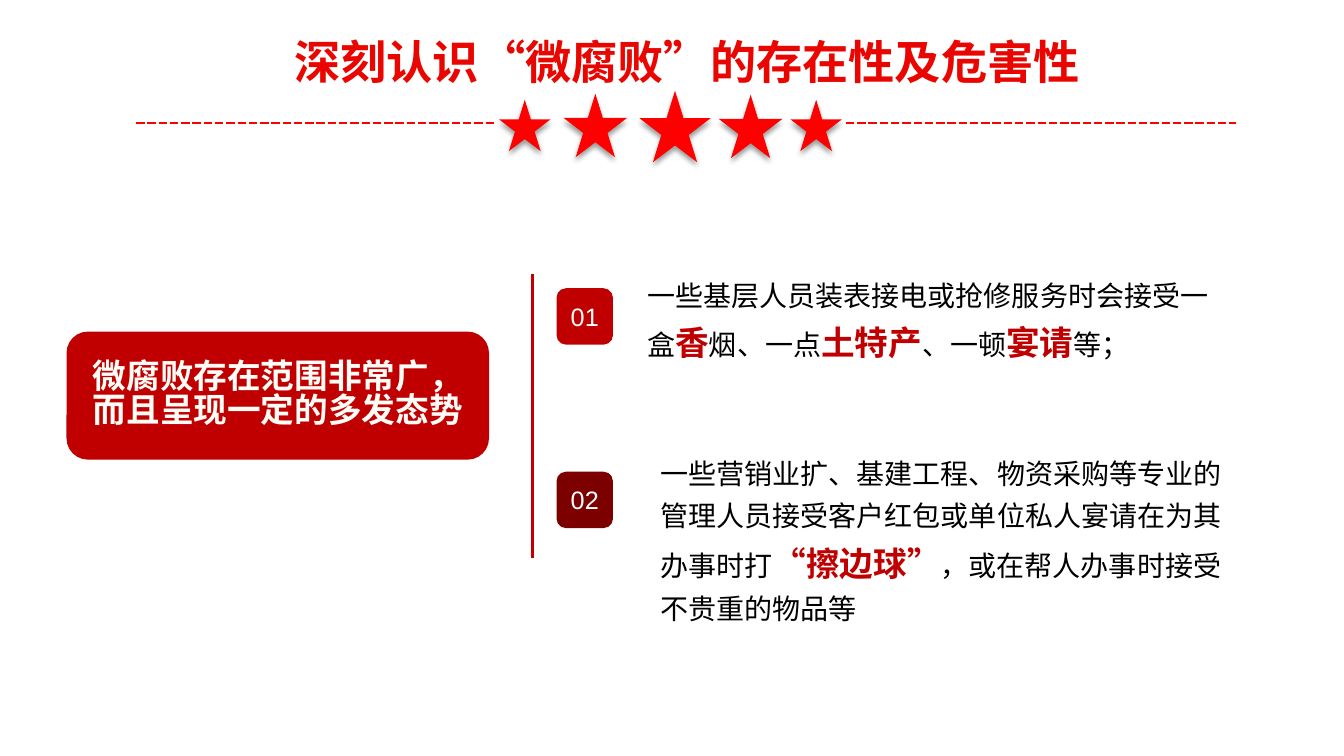
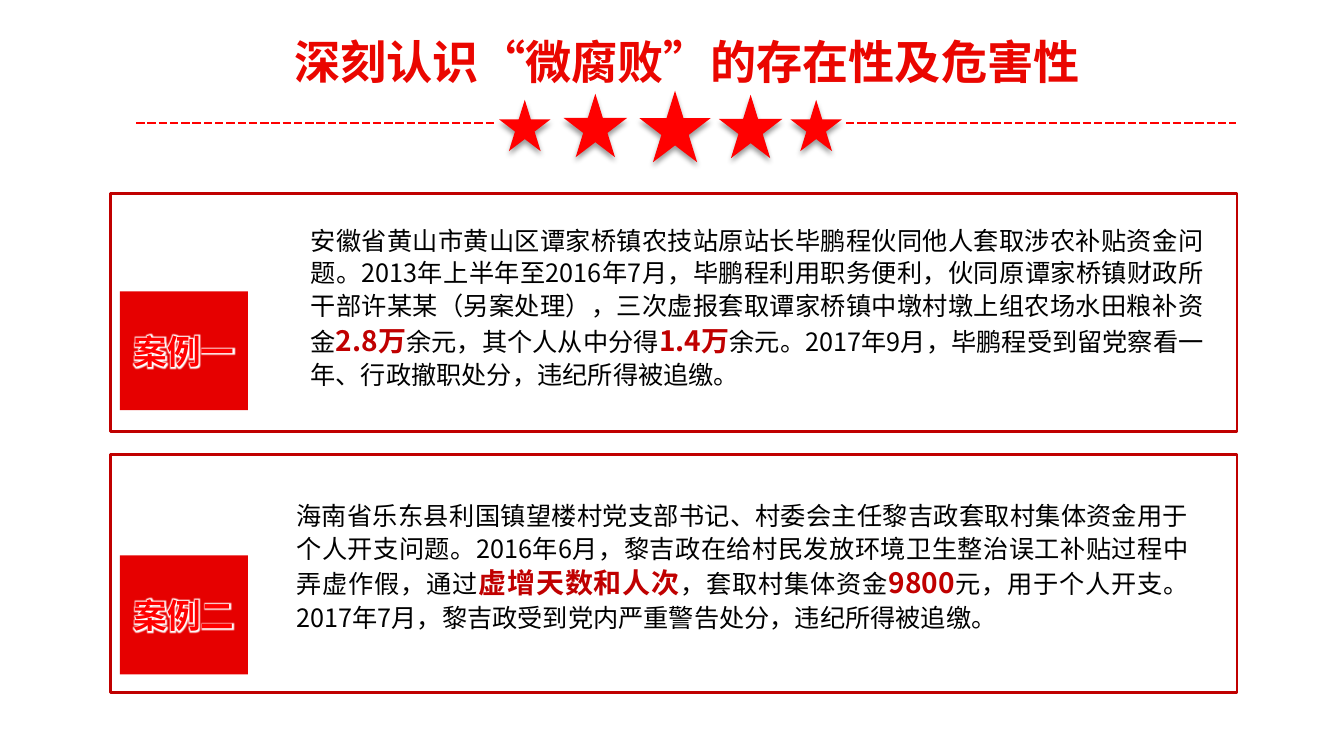
from lxml.etree import SubElement
from pptx import Presentation
from pptx.dml.color import RGBColor
from pptx.enum.dml import MSO_LINE
from pptx.enum.lang import MSO_LANGUAGE_ID
from pptx.enum.shapes import MSO_CONNECTOR, MSO_SHAPE
from pptx.enum.text import MSO_ANCHOR, MSO_AUTO_SIZE, PP_ALIGN
from pptx.oxml import parse_xml
from pptx.oxml.ns import nsdecls, qn
from pptx.util import Inches, Pt

COLORS = {
    "star": "FF0000",
    "crimson": "C00000",
    "maroon": "7D0000",
    "label": "E60000",
    "cream": "FFFDF8",
    "white": "FFFFFF",
    "black": "000000",
    "title_start": "EA0600",
    "title_end": "8E1E00",
    "label_end": "790000",
}
FONT = "Noto Sans CJK SC"
TITLE = "深刻认识“微腐败”的存在性及危害性"
TITLE_GRADIENT = [(0.28, "title_start"), (0.86, "title_end")]
LABEL_GRADIENT = [(0.49, "star"), (0.94, "label_end")]
STARS = [(4.95, 0.99, 0.51), (5.59, 0.93, 0.63), (6.34, 0.9, 0.71), (7.13, 0.94, 0.63), (7.84, 0.99, 0.51)]
STAR_SHADOW = (
    f'<a:outerShdw {nsdecls("a")} blurRad="50800" dist="38100" dir="5400000" rotWithShape="0">'
    f'<a:srgbClr val="{COLORS["black"]}"><a:alpha val="40000"/></a:srgbClr></a:outerShdw>'
)
TEXT_GLOW = (
    f'<a:effectLst {nsdecls("a")}><a:glow rad="63500">'
    f'<a:srgbClr val="{COLORS["white"]}"/></a:glow></a:effectLst>'
)


def rgb(name):
    return RGBColor.from_string(COLORS[name])


def apply(target, values):
    for name, value in values.items():
        setattr(target, name, value)


class SlideWriter:
    def __init__(self, deck):
        self.deck = deck
        self.page = None

    def new_page(self):
        self.page = self.deck.slides.add_slide(self.deck.slide_layouts[3])
        self.title(TITLE)
        for start, end in ((1.35, 4.92), (8.39, 12.26)):
            self.line((start, 1.22), (end, 1.22), "star", 2, MSO_LINE.SQUARE_DOT)
        for left, top, size in STARS:
            star = self.shape(MSO_SHAPE.STAR_5_POINT, (left, top, size, size), "star")
            effects = star.element.spPr.find(qn("a:effectLst"))
            effects.append(parse_xml(STAR_SHADOW))

    def place(self, box, area):
        apply(box, dict(zip(("left", "top", "width", "height"), map(Inches, area))))

    def span(self, para, text, size, color=None, bold=False, font=FONT, gradient=None):
        span = para.add_run()
        span.text = text
        apply(span.font, {"name": font, "size": Pt(size), "bold": bold,
                          "language_id": MSO_LANGUAGE_ID.SIMPLIFIED_CHINESE})
        if gradient:
            fill = span.font.fill
            fill.gradient()
            fill.gradient_angle = 270
            for stop, (position, name) in zip(fill.gradient_stops, gradient):
                stop.position = position
                stop.color.rgb = rgb(name)
        else:
            span.font.color.rgb = rgb(color)
        SubElement(span.font._element, qn("a:ea"), typeface=font)
        return span

    def title(self, text):
        box = self.page.shapes.title
        self.place(box, (2.68, 0.28, 8.27, 0.66))
        apply(box.text_frame, {"margin_top": 0, "margin_bottom": 0, "word_wrap": True,
                               "auto_size": MSO_AUTO_SIZE.NONE,
                               "vertical_anchor": MSO_ANCHOR.MIDDLE})
        para = box.text_frame.paragraphs[0]
        para.alignment = PP_ALIGN.CENTER
        self.span(para, text, 33, bold=True, gradient=TITLE_GRADIENT)

    def body(self, index, area, pieces, sizes, spacing, alignment):
        box = self.page.placeholders[index]
        self.place(box, area)
        apply(box.text_frame, {"word_wrap": True, "margin_top": Inches(0.07),
                               "auto_size": MSO_AUTO_SIZE.SHAPE_TO_FIT_TEXT,
                               "vertical_anchor": MSO_ANCHOR.TOP})
        para = box.text_frame.paragraphs[0]
        properties = para._p.get_or_add_pPr()
        apply_indent = {"marL": "0", "indent": "0"}
        for name, value in apply_indent.items():
            properties.set(name, value)
        SubElement(properties, qn("a:buNone"))
        apply(para, {"alignment": alignment, "line_spacing": spacing, "space_before": Pt(0)})
        for number, piece in enumerate(pieces):
            strong = number % 2 == 1
            self.span(para, piece, sizes[strong], "crimson" if strong else "black", strong)

    def shape(self, kind, area, fill=None, outline=None):
        box = self.page.shapes.add_shape(kind, *map(Inches, area))
        box.shadow.inherit = False
        if fill:
            box.fill.solid()
            box.fill.fore_color.rgb = rgb(fill)
        else:
            box.fill.background()
        if outline:
            box.line.color.rgb = rgb(outline)
            box.line.width = Pt(2)
        else:
            box.line.fill.background()
        return box

    def label(self, kind, area, fill, text, spacing=1.0, **style):
        box = self.shape(kind, area, fill)
        apply(box.text_frame, {"word_wrap": True, "vertical_anchor": MSO_ANCHOR.MIDDLE})
        para = box.text_frame.paragraphs[0]
        apply(para, {"alignment": PP_ALIGN.CENTER, "line_spacing": spacing})
        return self.span(para, text, **style)

    def line(self, start, end, color, width, dash=None):
        connector = self.page.shapes.add_connector(MSO_CONNECTOR.STRAIGHT, *map(Inches, start + end))
        connector.line.color.rgb = rgb(color)
        apply(connector.line, {"width": Pt(width), "dash_style": dash})
        SubElement(connector.element.spPr, qn("a:effectLst"))

    def case(self, index, frame_top, label_top, text_area, label, pieces):
        self.shape(MSO_SHAPE.RECTANGLE, (1.1, frame_top, 11.17, 2.36), outline="crimson")
        span = self.label(MSO_SHAPE.RECTANGLE, (1.19, label_top, 1.27, 1.18), "label", label,
                          size=24, bold=True, gradient=LABEL_GRADIENT)
        span.font._element.find(qn("a:latin")).addprevious(parse_xml(TEXT_GLOW))
        self.body(index, text_area, pieces, (18, 20), 1.08, PP_ALIGN.JUSTIFY)


def build_scope(writer):
    writer.new_page()
    points = [
        ("01", "crimson", 2.86, (6.32, 2.61, 5.78, 1.14),
         ["一些基层人员装表接电或抢修服务时会接受一盒", "香", "烟、一点", "土特产", "、一顿", "宴请", "等；"]),
        ("02", "maroon", 4.68, (6.45, 4.38, 5.78, 2.16),
         ["一些营销业扩、基建工程、物资采购等专业的管理人员接受客户红包或单位私人宴请在为其办事时打",
          "“擦边球”", "，或在帮人办事时接受不贵重的物品等"]),
    ]
    for index, (number, color, top, area, pieces) in enumerate(points, 1):
        writer.body(index, area, pieces, (20, 24), 1.25, PP_ALIGN.LEFT)
        writer.label(MSO_SHAPE.ROUNDED_RECTANGLE, (5.52, top, 0.56, 0.56), color, number,
                     size=18, color="white", font="Arial")
    writer.label(MSO_SHAPE.ROUNDED_RECTANGLE, (0.66, 3.29, 4.19, 1.27), "crimson",
                 "微腐败存在范围非常广，而且呈现一定的多发态势", spacing=0.83,
                 size=24, color="cream", bold=True)
    writer.line((5.28, 2.72), (5.28, 5.54), "crimson", 2.25)


def build_cases(writer):
    writer.new_page()
    writer.case(1, 1.92, 2.89, (2.98, 2.14, 9.06, 2.07), "案例一", [
        "安徽省黄山市黄山区谭家桥镇农技站原站长毕鹏程伙同他人套取涉农补贴资金问题。"
        "2013年上半年至2016年7月，毕鹏程利用职务便利，伙同原谭家桥镇财政所干部许某某（另案处理），"
        "三次虚报套取谭家桥镇中墩村墩上组农场水田粮补资金",
        "2.8万", "余元，其个人从中分得", "1.4万",
        "余元。2017年9月，毕鹏程受到留党察看一年、行政撤职处分，违纪所得被追缴。"])
    writer.case(2, 4.51, 5.51, (2.84, 4.87, 9.05, 1.68), "案例二", [
        "海南省乐东县利国镇望楼村党支部书记、村委会主任黎吉政套取村集体资金用于个人开支问题。"
        "2016年6月，黎吉政在给村民发放环境卫生整治误工补贴过程中弄虚作假，通过",
        "虚增天数和人次", "，套取村集体资金", "9800",
        "元，用于个人开支。2017年7月，黎吉政受到党内严重警告处分，违纪所得被追缴。"])


def main():
    deck = Presentation()
    apply(deck, {"slide_width": Inches(13.33), "slide_height": Inches(7.5)})
    writer = SlideWriter(deck)
    build_scope(writer)
    build_cases(writer)
    deck.save("out.pptx")


if __name__ == "__main__":
    main()
